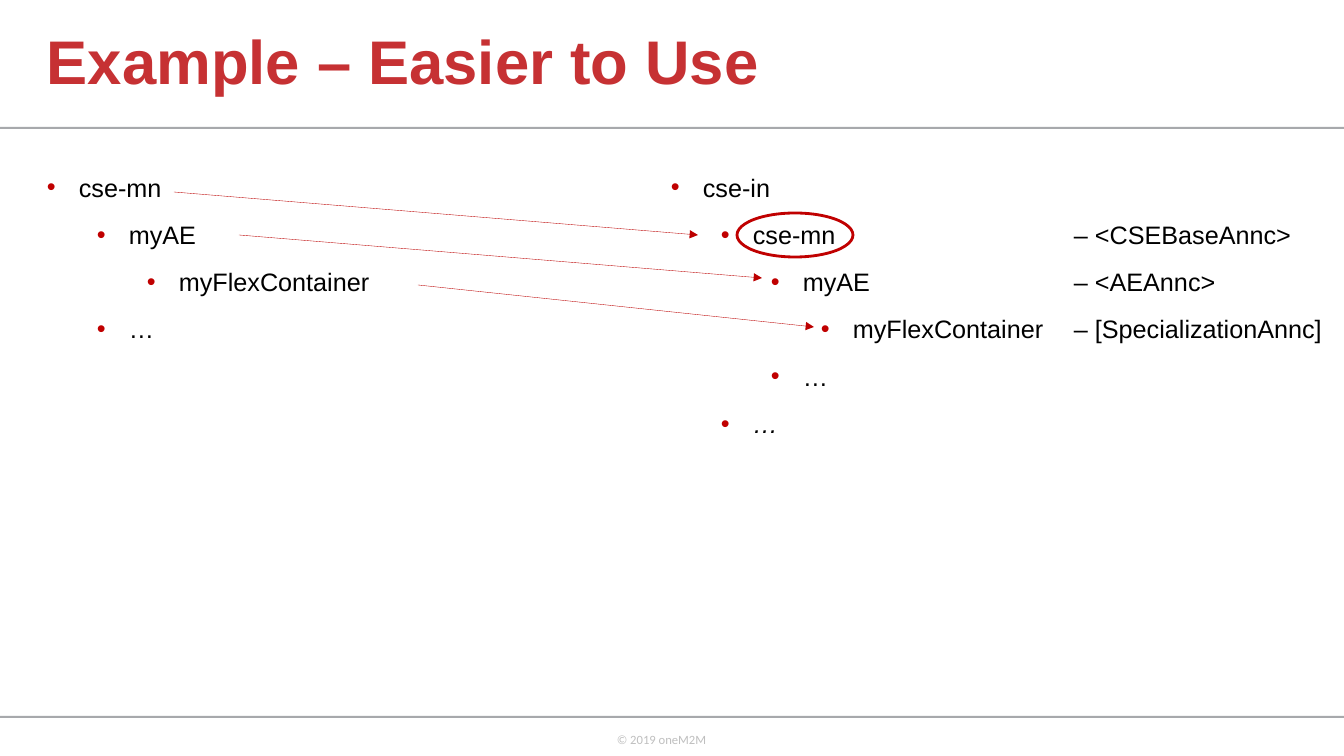
from lxml.etree import SubElement
from pptx import Presentation
from pptx.dml.color import RGBColor
from pptx.enum.shapes import MSO_CONNECTOR, MSO_SHAPE
from pptx.enum.text import MSO_ANCHOR
from pptx.oxml.ns import qn
from pptx.util import Pt

EMU_PER_PX = 914400 / 100.8
INDENT, LEVEL_STEP, TAG_TAB = 32, 50, 403

LOCAL_TREE = [(0, "cse-mn"), (1, "myAE"), (2, "myFlexContainer"), (1, "…")]
REMOTE_TREE = [
    (0, "cse-in"),
    (1, "cse-mn\t– <CSEBaseAnnc>"),
    (2, "myAE\t– <AEAnnc>"),
    (3, "myFlexContainer\t– [SpecializationAnnc]"),
    (2, "…"),
    (1, "…"),
]
ANNOUNCE_ARROWS = [
    (174, 192, 698, 235),
    (239, 235, 762, 278),
    (418, 285, 814, 327),
]


def px(n):
    return round(n * EMU_PER_PX)


def rgb(color):
    return RGBColor.from_string(color)


class Deck:
    font = "Arial"
    title_color = "C63133"
    accent = "C00000"
    arrow_color = "BC0000"
    rule_color = "A7A9AC"
    text_color = "000000"
    footer_color = "BFBFBF"

    def __init__(self):
        self.prs = Presentation()
        self.prs.slide_width, self.prs.slide_height = px(1344), px(756)
        self.s = self.prs.slides.add_slide(self.prs.slide_layouts[6])

    def shape(self, kind, *box):
        sp = self.s.shapes.add_shape(kind, *map(px, box))
        sp.shadow.inherit = False
        return sp

    def rule(self, y):
        sp = self.shape(MSO_SHAPE.RECTANGLE, 0, y, 1344, 2)
        sp.fill.solid()
        sp.fill.fore_color.rgb = rgb(self.rule_color)
        sp.line.fill.background()

    def ring(self, *box):
        sp = self.shape(MSO_SHAPE.OVAL, *box)
        sp.fill.background()
        sp.line.color.rgb = rgb(self.accent)
        sp.line.width = Pt(2)

    def arrow(self, *ends):
        cn = self.s.shapes.add_connector(MSO_CONNECTOR.STRAIGHT, *map(px, ends))
        cn.line.color.rgb = rgb(self.arrow_color)
        cn.line.width = Pt(0.25)
        SubElement(cn.line._get_or_add_ln(), qn("a:tailEnd"), type="triangle")
        SubElement(cn._element.spPr, qn("a:effectLst"))

    def frame(self, *box, wrap=True):
        tf = self.s.shapes.add_textbox(*map(px, box)).text_frame
        tf.word_wrap = wrap
        return tf

    def style(self, p, size, color, bold=False, font=None):
        for r in p.runs:
            r.font.name = font or self.font
            r.font.size = Pt(size)
            r.font.bold = bold
            r.font.color.rgb = rgb(color)

    def title(self, text):
        tf = self.frame(37, 0, 983, 129)
        tf.vertical_anchor = MSO_ANCHOR.MIDDLE
        tf.text = text
        p = tf.paragraphs[0]
        p.line_spacing = 0.9
        self.style(p, 44, self.title_color, bold=True)

    def footer(self, text):
        tf = self.frame(607, 727, 129, 40, wrap=False)
        tf.text = text
        self.style(tf.paragraphs[0], 9, self.footer_color, font="Calibri")

    def bullet(self, p, level):
        """Indent by level, with a coloured bullet and one tab stop for tags."""
        pPr = p._p.get_or_add_pPr()
        pPr.set("marL", str(px(INDENT + LEVEL_STEP * level)))
        pPr.set("indent", str(-px(INDENT)))
        clr = SubElement(pPr, qn("a:buClr"))
        SubElement(clr, qn("a:srgbClr"), val=self.accent)
        SubElement(pPr, qn("a:buFont"), typeface=self.font)
        SubElement(pPr, qn("a:buChar"), char="•")
        tabs = SubElement(pPr, qn("a:tabLst"))
        SubElement(tabs, qn("a:tab"), pos=str(px(TAG_TAB)), algn="l")

    def tree(self, items, *box):
        """Add a nested bullet list and return its paragraphs."""
        tf = self.frame(*box)
        for i, (level, text) in enumerate(items):
            p = tf.add_paragraph() if i else tf.paragraphs[0]
            p.text = text
            p.level = level
            self.bullet(p, level)
            p.line_spacing = 1.1
            p.space_before = Pt(10 if i else 0)
            self.style(p, 18, self.text_color)
        return tf.paragraphs


def main():
    deck = Deck()
    for y in (127, 716):
        deck.rule(y)
    deck.footer("© 2019 oneM2M")
    deck.title("Example – Easier to Use")
    deck.tree(LOCAL_TREE, 37, 164, 533, 552)
    remote = deck.tree(REMOTE_TREE, 661, 164, 675, 552)
    remote[-1].runs[0].font.italic = True
    for ends in ANNOUNCE_ARROWS:
        deck.arrow(*ends)
    deck.ring(737, 213, 116, 44)
    deck.prs.save("out.pptx")


if __name__ == "__main__":
    main()
